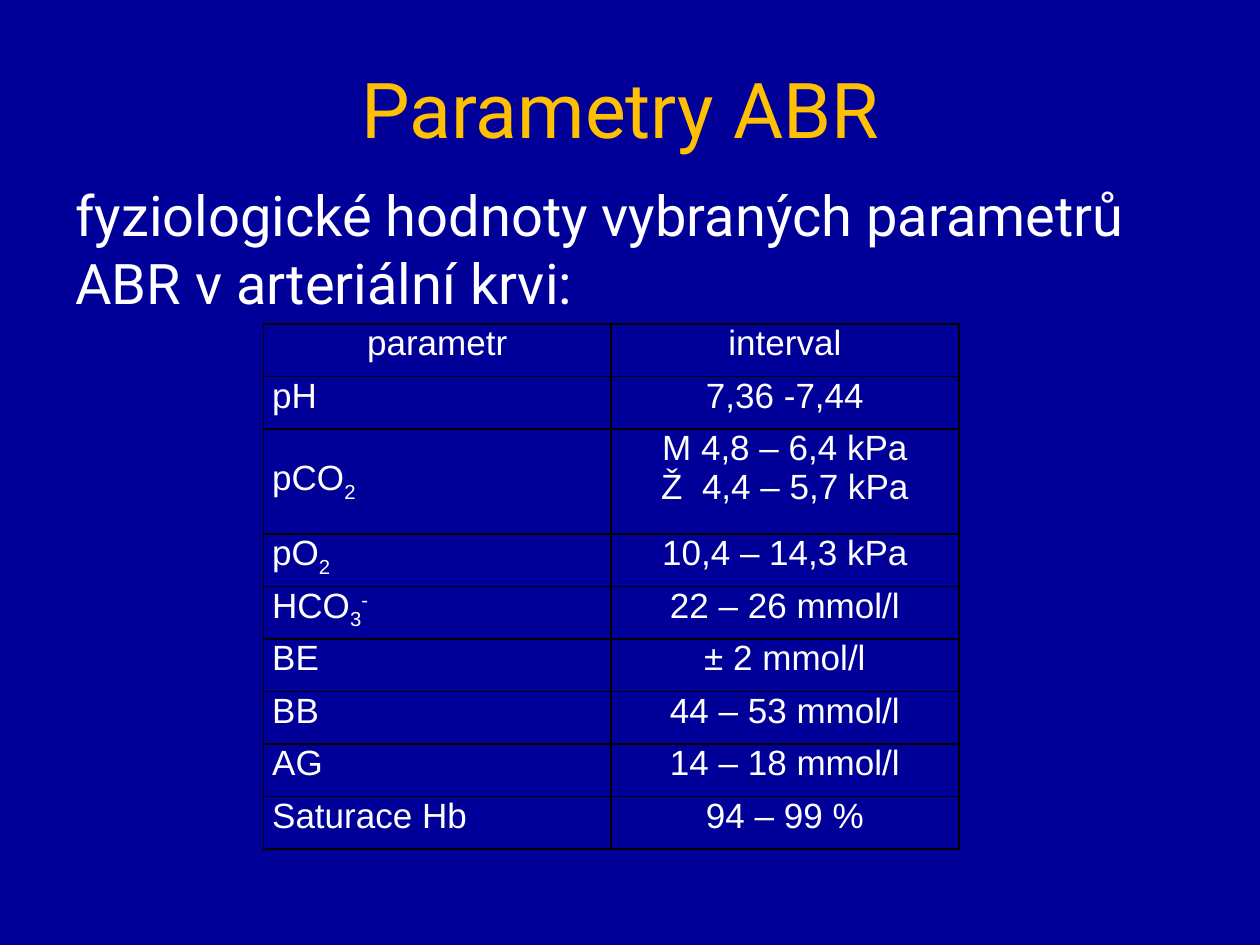
from lxml.etree import SubElement
from pptx import Presentation
from pptx.dml.color import RGBColor
from pptx.enum.text import MSO_ANCHOR, PP_ALIGN
from pptx.oxml.ns import qn
from pptx.util import Inches, Pt

NAVY = RGBColor(0x00, 0x00, 0x99)
GOLD = RGBColor(0xFF, 0xC0, 0x00)
WHITE = RGBColor(0xFF, 0xFF, 0xFF)
BLACK = RGBColor(0x00, 0x00, 0x00)

SLIDE_WIDTH, SLIDE_HEIGHT = Inches(10), Inches(7.5)
MARGIN = 0.05 * SLIDE_WIDTH
TABLE_LEFT, TABLE_TOP = Inches(2.09), Inches(2.57)
COLUMN_WIDTH = Inches(2.76)
LINE_HEIGHT = Inches(0.417)

SUB, SUPER = -25000, 30000

# Each parameter is a list of (text, baseline shift); each interval is a list of lines.
HEADINGS = ("parametr", "interval")
PARAMETERS = [
    ([("pH", 0)], ["7,36 -7,44"]),
    ([("pCO", 0), ("2", SUB)], ["M 4,8 – 6,4 kPa", "Ž  4,4 – 5,7 kPa"]),
    ([("pO", 0), ("2", SUB)], ["10,4 – 14,3 kPa"]),
    ([("HCO", 0), ("3", SUB), ("-", SUPER)], ["22 – 26 mmol/l"]),
    ([("BE", 0)], ["± 2 mmol/l"]),
    ([("BB", 0)], ["44 – 53 mmol/l"]),
    ([("AG", 0)], ["14 – 18 mmol/l"]),
    ([("Saturace Hb", 0)], ["94 – 99 %"]),
]


def format_run(run, font_name, size, color):
    run.font.name = font_name
    run.font.size = Pt(size)
    run.font.color.rgb = color


def add_text(slide, text, top, height, size, color, align, anchor):
    box = slide.shapes.add_textbox(int(MARGIN), int(top * SLIDE_HEIGHT),
                                   int(SLIDE_WIDTH - 2 * MARGIN), int(height * SLIDE_HEIGHT))
    frame = box.text_frame
    frame.word_wrap = True
    frame.vertical_anchor = anchor
    frame.text = text
    paragraph = frame.paragraphs[0]
    paragraph.alignment = align
    format_run(paragraph.runs[0], "Roboto", size, color)


def draw_borders(cell):
    properties = cell._tc.get_or_add_tcPr()
    for position, side in enumerate(("a:lnL", "a:lnR", "a:lnT", "a:lnB")):
        line = properties.makeelement(qn(side), {"w": str(Pt(1))})
        fill = SubElement(line, qn("a:solidFill"))
        SubElement(fill, qn("a:srgbClr"), val=str(BLACK))
        properties.insert(position, line)


def fill_cell(cell, lines, align):
    """Write lines, each a list of (text, baseline shift), into a bordered clear cell."""
    cell.fill.background()
    cell.margin_left = cell.margin_right = Inches(0.07)
    cell.margin_top = cell.margin_bottom = 0
    frame = cell.text_frame
    frame.text = "\n".join("" for _ in lines)
    for paragraph, pieces in zip(frame.paragraphs, lines):
        paragraph.alignment = align
        for text, baseline in pieces:
            run = paragraph.add_run()
            run.text = text
            format_run(run, "Arial", 20, WHITE)
            if baseline:
                run.font._element.set("baseline", str(baseline))
    draw_borders(cell)


def add_parameter_table(slide):
    row_lines = [1] + [len(interval) for _, interval in PARAMETERS]
    table = slide.shapes.add_table(len(row_lines), len(HEADINGS), TABLE_LEFT, TABLE_TOP,
                                   len(HEADINGS) * COLUMN_WIDTH,
                                   sum(row_lines) * LINE_HEIGHT).table
    table.first_row = table.horz_banding = False
    for column in table.columns:
        column.width = COLUMN_WIDTH
    for row, line_count in zip(table.rows, row_lines):
        row.height = line_count * LINE_HEIGHT

    for column, heading in enumerate(HEADINGS):
        fill_cell(table.cell(0, column), [[(heading, 0)]], PP_ALIGN.CENTER)
    for row, (parameter, interval) in enumerate(PARAMETERS, start=1):
        name_cell = table.cell(row, 0)
        fill_cell(name_cell, [parameter], PP_ALIGN.LEFT)
        if len(interval) > 1:
            name_cell.vertical_anchor = MSO_ANCHOR.MIDDLE
        fill_cell(table.cell(row, 1), [[(line, 0)] for line in interval], PP_ALIGN.CENTER)


def main():
    presentation = Presentation()
    presentation.slide_width, presentation.slide_height = SLIDE_WIDTH, SLIDE_HEIGHT
    slide = presentation.slides.add_slide(presentation.slide_layouts[6])
    slide.background.fill.solid()
    slide.background.fill.fore_color.rgb = NAVY

    add_text(slide, "Parametry ABR ", 0.043, 0.143, 44, GOLD,
             PP_ALIGN.CENTER, MSO_ANCHOR.MIDDLE)
    add_text(slide, "fyziologické hodnoty vybraných parametrů ABR v arteriální krvi:",
             0.185, 0.756, 32, WHITE, PP_ALIGN.LEFT, MSO_ANCHOR.TOP)
    add_parameter_table(slide)
    presentation.save("out.pptx")


if __name__ == "__main__":
    main()
